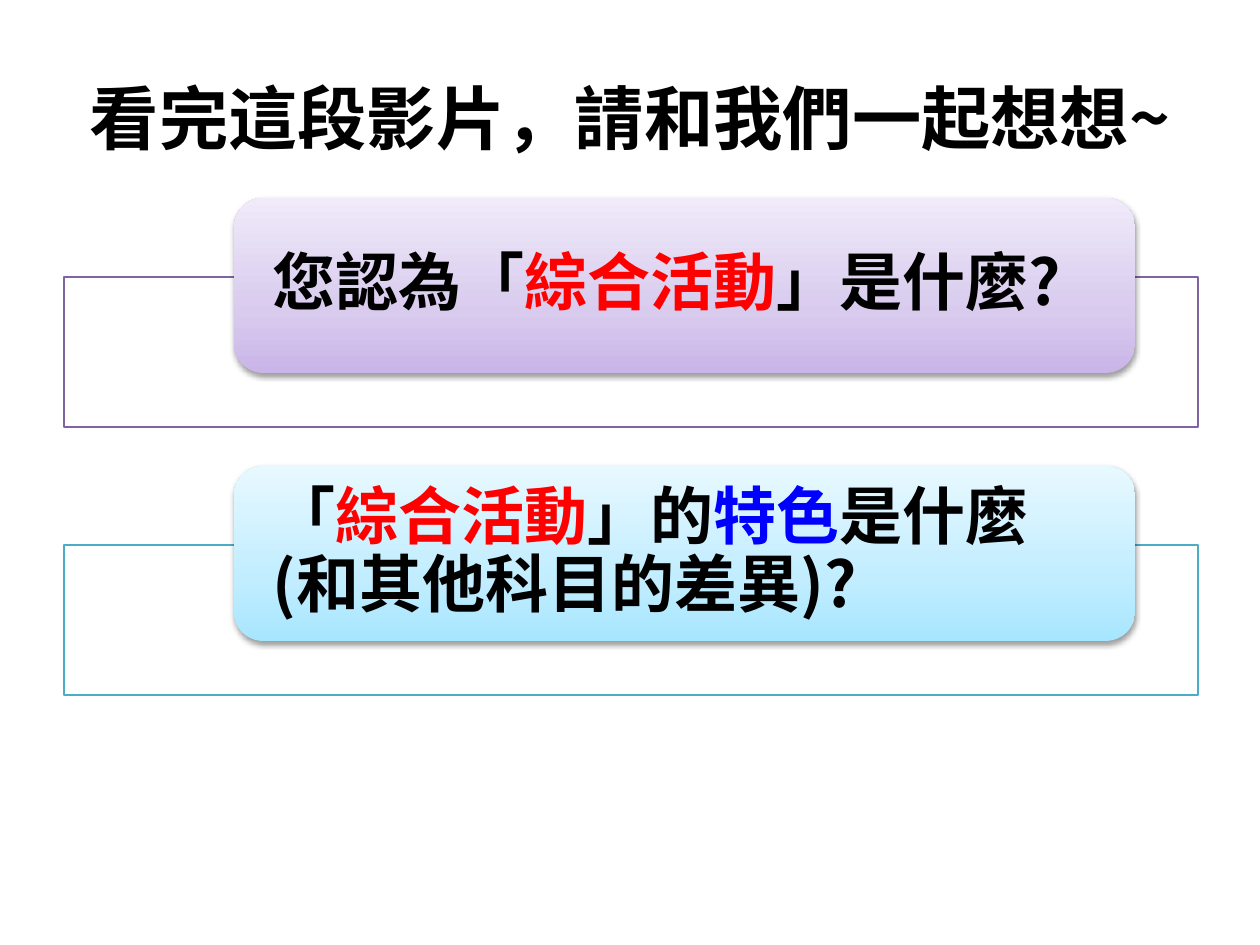
from lxml import etree
from pptx import Presentation
from pptx.dml.color import RGBColor
from pptx.enum.shapes import MSO_SHAPE as Shape
from pptx.enum.text import MSO_ANCHOR as Anchor, MSO_AUTO_SIZE as AutoSize, PP_ALIGN as Align
from pptx.oxml import parse_xml
from pptx.oxml.ns import nsdecls, qn
from pptx.util import Pt

COLORS = {
    "text": "000000", "topic": "FF0000", "trait": "0000FF", "white": "FFFFFF",
    "purple line": "8064A2", "teal line": "4BACC6",
}
PURPLE = [(0, "C9B5E8"), (35, "D8CBEE"), (100, "F0EAF9")]
TEAL = [(0, "A7E6FF"), (35, "C1EDFF"), (100, "E7F8FF")]
FONT = "Noto Sans CJK SC"
SCALE = 914400 / 126  # EMU per px


def px(*lengths):
    return [round(length * SCALE) for length in lengths]


class SlideBuilder:
    def __init__(self, page):
        self.page = page

    def style(self, span, size, color):
        font = span.font
        font.name, font.size, font.bold = FONT, Pt(size), True
        font.color.rgb = RGBColor.from_string(COLORS[color])
        # East Asian text takes its own typeface
        east_asian = etree.SubElement(font._element, qn("a:ea"))
        east_asian.set("typeface", FONT)

    def title(self, text, place, size):
        box = self.page.shapes.title
        box.left, box.top, box.width, box.height = px(*place)
        frame = box.text_frame
        frame.text = text
        frame.auto_size = AutoSize.NONE
        frame.vertical_anchor = Anchor.MIDDLE
        para = frame.paragraphs[0]
        para.alignment = Align.CENTER
        self.style(para.runs[0], size, "text")

    def frame(self, place, line):
        box = self.page.shapes.add_shape(Shape.RECTANGLE, *px(*place))
        box.shadow.inherit = False
        box.fill.solid()
        box.fill.fore_color.rgb = RGBColor.from_string(COLORS["white"])
        color = box.fill._xPr.find(qn("a:solidFill"))[0]
        etree.SubElement(color, qn("a:alpha")).set("val", "90000")
        box.line.color.rgb = RGBColor.from_string(COLORS[line])
        box.line.width = Pt(0.75)

    def panel(self, place, stops, lines, size):
        box = self.page.shapes.add_shape(Shape.ROUNDED_RECTANGLE, *px(*place))
        box.line.fill.background()

        # Three-stop gradient, darkest at the bottom
        marks = "".join(
            f'<a:gs pos="{position * 1000}"><a:srgbClr val="{color}"/></a:gs>'
            for position, color in stops)
        properties = box._element.spPr
        properties.find(qn("a:prstGeom")).addnext(parse_xml(
            f'<a:gradFill {nsdecls("a")} rotWithShape="1"><a:gsLst>{marks}</a:gsLst>'
            '<a:lin ang="16200000" scaled="1"/></a:gradFill>'))

        # Soft shadow below
        properties.append(parse_xml(
            f'<a:effectLst {nsdecls("a")}><a:outerShdw blurRad="40000" dist="20000" '
            'dir="5400000" rotWithShape="0"><a:srgbClr val="000000">'
            '<a:alpha val="38000"/></a:srgbClr></a:outerShdw></a:effectLst>'))

        # Question, with key words in colour
        frame = box.text_frame
        frame.word_wrap = True
        frame.vertical_anchor = Anchor.MIDDLE
        frame.margin_left, frame.margin_right = px(30, 30)
        frame.margin_top = frame.margin_bottom = 0
        para = frame.paragraphs[0]
        para.alignment = Align.LEFT
        para.line_spacing = 0.9
        for number, spans in enumerate(lines):
            if number:
                para.add_line_break()
            for text, color in spans:
                span = para.add_run()
                span.text = text
                self.style(span, size, color)


def main():
    deck = Presentation()
    deck.slide_width, deck.slide_height = px(1260, 945)
    builder = SlideBuilder(deck.slides.add_slide(deck.slide_layouts[5]))

    builder.title("看完這段影片，請和我們一起想想~", (63, 38, 1134, 157), 39.6)

    # One framed panel per question
    questions = [
        ("purple line", PURPLE, [
            [("您認為「", "text"), ("綜合活動", "topic"), ("」是什麼?", "text")],
        ]),
        ("teal line", TEAL, [
            [("「", "text"), ("綜合活動", "topic"), ("」的", "text"),
             ("特色", "trait"), ("是什麼", "text")],
            [("(和其他科目的差異)?", "text")],
        ]),
    ]
    for row, (line, stops, lines) in enumerate(questions):
        top = 198 + row * 268
        builder.frame((64, top + 79, 1134, 150), line)
        builder.panel((234, top, 901, 175), stops, lines, 36)

    deck.save("out.pptx")


if __name__ == "__main__":
    main()
